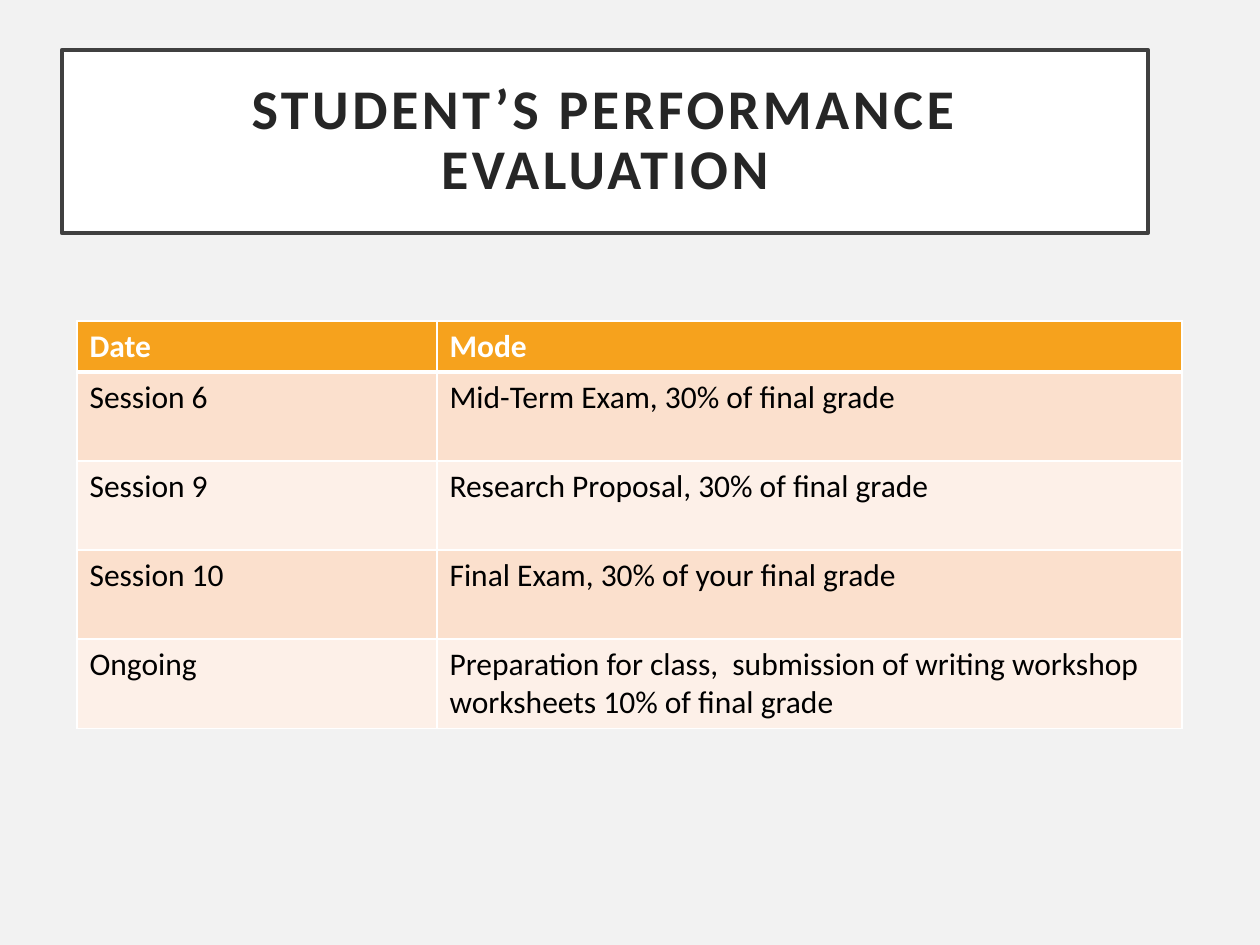
from pptx import Presentation
from pptx.dml.color import RGBColor
from pptx.enum.shapes import MSO_SHAPE
from pptx.enum.text import MSO_ANCHOR, PP_ALIGN
from pptx.oxml.ns import qn
from pptx.util import Pt
from lxml.etree import SubElement

PX = 914400 // 126  # EMU per pixel
FONT = "Calibri"
COLORS = {
    "background": "F2F2F2",
    "white": "FFFFFF",
    "frame": "404040",
    "title": "262626",
    "header": "F6A21D",
    "odd": "FBE0CD",
    "even": "FDF0E8",
    "text": "000000",
}
ROWS = [
    ("Date", "Mode"),
    ("Session 6", "Mid-Term Exam, 30% of final grade"),
    ("Session 9", "Research Proposal, 30% of final grade"),
    ("Session 10", "Final Exam, 30% of your final grade"),
    ("Ongoing", "Preparation for class,  submission of writing workshop "
                "worksheets 10% of final grade"),
]


def px(*values):
    return [v * PX for v in values]


def rgb(name):
    return RGBColor.from_string(COLORS[name])


def paint(fill, color):
    fill.solid()
    fill.fore_color.rgb = rgb(color)


def add_run(p, text, size, color, bold):
    r = p.add_run()
    r.text = text
    r.font.name = FONT
    r.font.size = Pt(size)
    r.font.bold = bold
    r.font.color.rgb = rgb(color)
    return r


def add_title(s, text, box):
    sp = s.shapes.add_shape(MSO_SHAPE.RECTANGLE, *px(*box))
    sp.shadow.inherit = False
    paint(sp.fill, "white")
    sp.line.color.rgb = rgb("frame")
    sp.line.width = Pt(2.5)
    tf = sp.text_frame
    tf.word_wrap = True
    tf.vertical_anchor = MSO_ANCHOR.MIDDLE
    tf.margin_left = tf.margin_right = tf.margin_top = tf.margin_bottom = 25 * PX
    p = tf.paragraphs[0]
    p.alignment = PP_ALIGN.CENTER
    p.line_spacing = 0.9
    r = add_run(p, text, 32, "title", True)
    r.font._element.set("spc", "200")  # letter spacing, 1/100 pt


def set_borders(cell, top, bottom):
    tcPr = cell._tc.get_or_add_tcPr()
    for side, width in zip("LRTB", (1, 1, top, bottom)):
        ln = SubElement(tcPr, qn(f"a:ln{side}"), w=str(Pt(width)))
        fill = SubElement(ln, qn("a:solidFill"))
        SubElement(fill, qn("a:srgbClr"), val=COLORS["white"])


def add_grades_table(s, left, top, widths, heights):
    frame = s.shapes.add_table(len(heights), len(widths),
                               *px(left, top, sum(widths), sum(heights)))
    table = frame.table
    for column, width in zip(table.columns, widths):
        column.width = width * PX
    for i, (row, height, texts) in enumerate(zip(table.rows, heights, ROWS)):
        row.height = height * PX
        header = i == 0
        band = "header" if header else ("even", "odd")[i % 2]
        for cell, text in zip(row.cells, texts):
            # A thick rule separates the header from the body
            set_borders(cell, 3 if i == 1 else 1, 3 if header else 1)
            paint(cell.fill, band)
            add_run(cell.text_frame.paragraphs[0], text, 18,
                    "white" if header else "text", header)


def main():
    prs = Presentation()
    prs.slide_width, prs.slide_height = px(1260, 945)
    s = prs.slides.add_slide(prs.slide_layouts[6])
    paint(s.background.fill, "background")

    # Framed title
    add_title(s, "STUDENT’S PERFORMANCE EVALUATION", (62, 50, 1086, 183))

    # Grading table: header row and four equal body rows
    add_grades_table(s, 77, 321, (360, 745), [51] + [89] * 4)

    prs.save("out.pptx")


if __name__ == "__main__":
    main()
